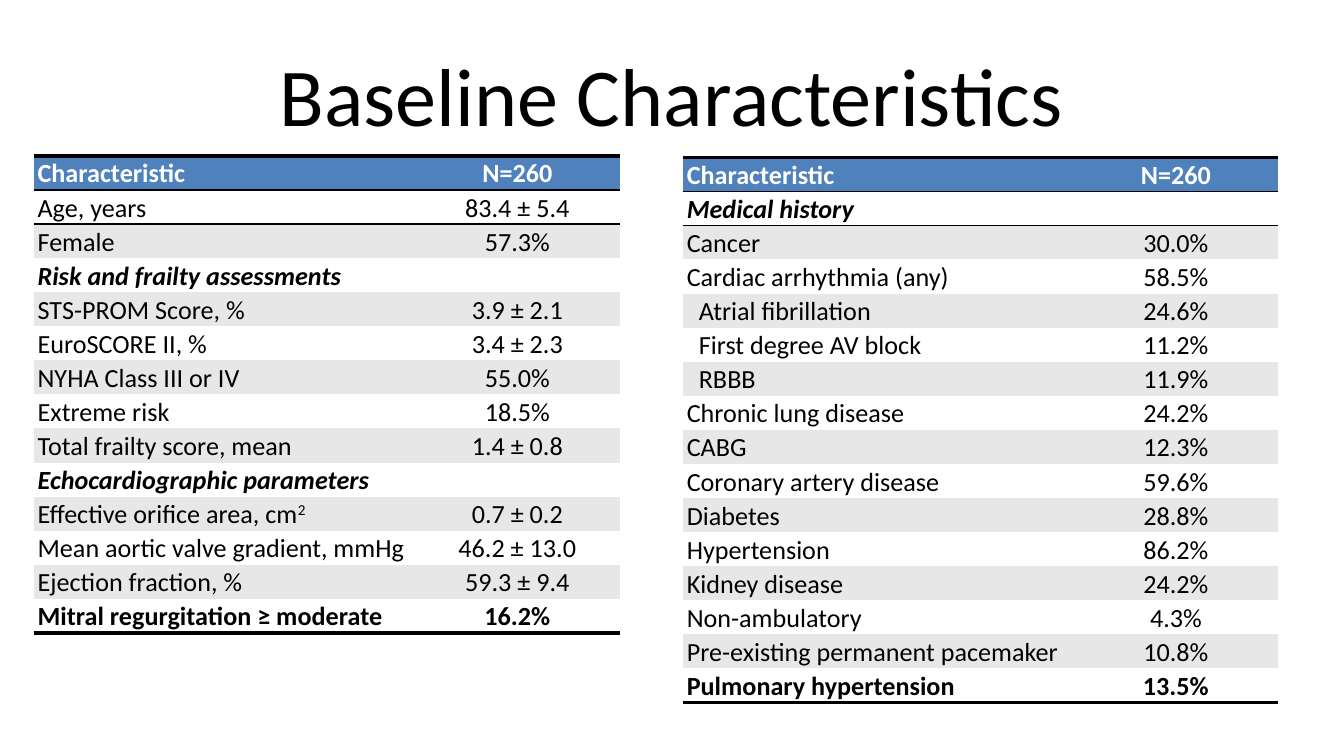
from dataclasses import dataclass

from lxml import etree
from pptx import Presentation
from pptx.dml.color import RGBColor
from pptx.enum.text import MSO_ANCHOR, PP_ALIGN
from pptx.oxml.ns import qn
from pptx.util import Inches, Pt

LEFT, CENTER = PP_ALIGN.LEFT, PP_ALIGN.CENTER
MIDDLE = MSO_ANCHOR.MIDDLE
PLAIN_STYLE = "{2D5ABB26-0587-4C30-8999-92F81FD0307C}"


@dataclass(frozen=True)
class Theme:
    font: str = "Calibri"
    title: int = 44
    body: int = 14
    line_spacing: float = 1.07
    black: str = "000000"
    white: str = "FFFFFF"
    header: str = "4F81BD"
    band: str = "E7E7E7"


THEME = Theme()
SLIDE_WIDTH = 10
SLIDE_HEIGHT = SLIDE_WIDTH * 9 / 16
HEADER = ("Characteristic", "N=260")
VALUE_WIDTH = 1.52
ROW_HEIGHT = 0.25
PADDING = 0.03
INDENT = 0.09

PATIENT_ROWS = [
    HEADER,
    ("Age, years", "83.4 ± 5.4"),
    ("Female", "57.3%"),
    ("Risk and frailty assessments",),
    ("STS-PROM Score, %", "3.9 ± 2.1"),
    ("EuroSCORE II, %", "3.4 ± 2.3"),
    ("NYHA Class III or IV", "55.0%"),
    ("Extreme risk", "18.5%"),
    ("Total frailty score, mean", "1.4 ± 0.8"),
    ("Echocardiographic parameters",),
    ("Effective orifice area, cm^2", "0.7 ± 0.2"),
    ("Mean aortic valve gradient, mmHg", "46.2 ± 13.0"),
    ("Ejection fraction, %", "59.3 ± 9.4"),
    ("Mitral regurgitation ≥ moderate", "16.2%"),
]
HISTORY_ROWS = [
    HEADER,
    ("Medical history",),
    ("Cancer", "30.0%"),
    ("Cardiac arrhythmia (any)", "58.5%"),
    ("Atrial fibrillation", "24.6%"),
    ("First degree AV block", "11.2%"),
    ("RBBB", "11.9%"),
    ("Chronic lung disease", "24.2%"),
    ("CABG", "12.3%"),
    ("Coronary artery disease", "59.6%"),
    ("Diabetes", "28.8%"),
    ("Hypertension", "86.2%"),
    ("Kidney disease", "24.2%"),
    ("Non-ambulatory", "4.3%"),
    ("Pre-existing permanent pacemaker", "10.8%"),
    ("Pulmonary hypertension", "13.5%"),
]
ARRHYTHMIAS = {"Atrial fibrillation", "First degree AV block", "RBBB"}


def style_font(font, size, color, bold=False, italic=False):
    font.name = THEME.font
    font.size = Pt(size)
    font.bold = bold
    font.italic = italic
    font.color.rgb = RGBColor.from_string(color)


def add_title(s, text):
    title = s.shapes.title
    title.left, title.top = Inches(0.5), Inches(0.23)
    title.width, title.height = Inches(9), Inches(0.94)
    tf = title.text_frame
    tf.vertical_anchor = MIDDLE
    p = tf.paragraphs[0]
    p.alignment = CENTER
    r = p.add_run()
    r.text = text
    style_font(r.font, THEME.title, THEME.black)


def write_cell(cell, text, align=LEFT, indent=0, **style):
    cell.margin_left = Inches(PADDING + indent)
    cell.margin_right = Inches(PADDING)
    cell.margin_top = cell.margin_bottom = 0
    p = cell.text_frame.paragraphs[0]
    p.alignment = align
    p.line_spacing = THEME.line_spacing
    for i, part in enumerate(text.split("^")):
        r = p.add_run()
        r.text = part
        style_font(r.font, THEME.body, **style)
        if i:
            r.font._element.set("baseline", "30000")


def add_border(cell, side, width):
    tcPr = cell._tc.get_or_add_tcPr()
    ln = etree.SubElement(tcPr, qn(f"a:ln{side}"), w=str(Pt(width)))
    fill = etree.SubElement(ln, qn("a:solidFill"))
    etree.SubElement(fill, qn("a:srgbClr"), val=THEME.black)


def fill_cell(cell, color):
    cell.fill.solid()
    cell.fill.fore_color.rgb = RGBColor.from_string(color)


def add_characteristics(s, rows, left, top, label_width):
    last = len(rows) - 1
    borders = {0: {"T": 2, "B": 1}, 1: {"T": 1}, last: {"B": 2}}
    frame = s.shapes.add_table(
        len(rows), 2, Inches(left), Inches(top),
        Inches(label_width + VALUE_WIDTH), Inches(ROW_HEIGHT * len(rows)))
    table = frame.table
    table.horz_banding = False
    table._tbl.tblPr.find(qn("a:tableStyleId")).text = PLAIN_STYLE
    table.columns[0].width = Inches(label_width)
    table.columns[1].width = Inches(VALUE_WIDTH)
    for i, texts in enumerate(rows):
        table.rows[i].height = Inches(ROW_HEIGHT)
        section = len(texts) == 1
        style = dict(color=THEME.black if i else THEME.white,
                     bold=section or i in (0, last), italic=section)
        fill = THEME.white if i % 2 else THEME.band
        indent = INDENT if texts[0] in ARRHYTHMIAS else 0
        label, value = table.cell(i, 0), table.cell(i, 1)
        for cell in (label, value):
            for side, width in borders.get(i, {}).items():
                add_border(cell, side, width)
            fill_cell(cell, fill if i else THEME.header)
        write_cell(label, texts[0], indent=indent, **style)
        if section:
            label.merge(value)
        else:
            write_cell(value, texts[1], align=CENTER, **style)


def main():
    prs = Presentation()
    prs.slide_width, prs.slide_height = Inches(SLIDE_WIDTH), Inches(SLIDE_HEIGHT)
    s = prs.slides.add_slide(prs.slide_layouts[5])
    add_title(s, "Baseline Characteristics")
    add_characteristics(s, PATIENT_ROWS, 0.25, 1.16, 2.84)
    add_characteristics(s, HISTORY_ROWS, 5.08, 1.17, 2.91)
    prs.save("out.pptx")


if __name__ == "__main__":
    main()
